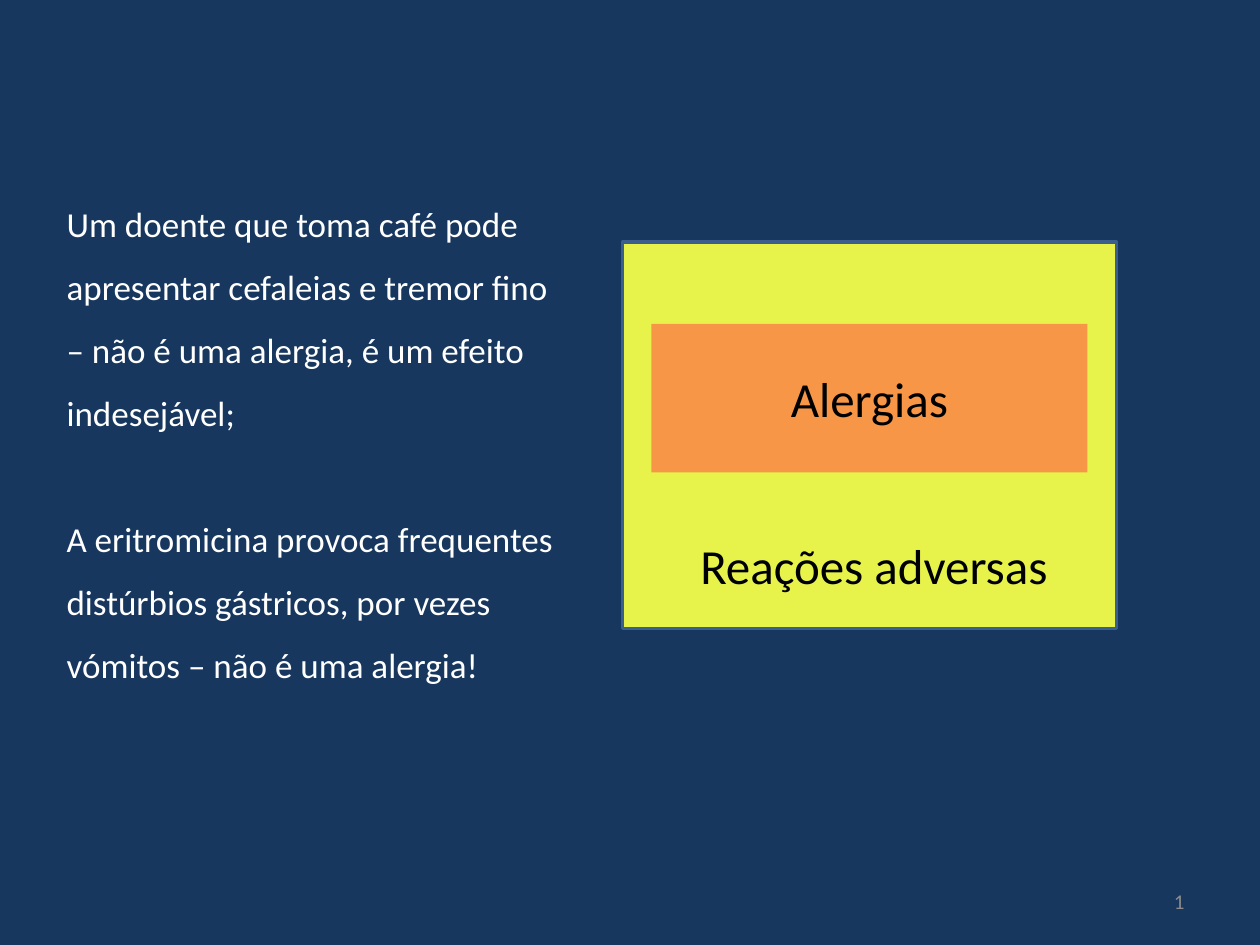
from lxml import etree
from pptx import Presentation
from pptx.dml.color import RGBColor
from pptx.enum.shapes import MSO_SHAPE
from pptx.enum.text import MSO_ANCHOR, PP_ALIGN
from pptx.oxml import parse_xml
from pptx.oxml.ns import nsdecls, qn
from pptx.util import Inches, Pt

NAVY = RGBColor(0x17, 0x37, 0x5E)
YELLOW = RGBColor(0xE7, 0xF3, 0x4B)
ORANGE = RGBColor(0xF7, 0x96, 0x46)
BLUE = RGBColor(0x3A, 0x5F, 0x8C)
GREY = RGBColor(0x8C, 0x8C, 0x8C)
WHITE = RGBColor(0xFF, 0xFF, 0xFF)
BLACK = RGBColor(0, 0, 0)
FONT = "Calibri"

EXAMPLES = [
    "Um doente que toma café pode apresentar cefaleias e tremor fino "
    "– não é uma alergia, é um efeito indesejável;",
    "A eritromicina provoca frequentes distúrbios gástricos, por vezes "
    "vómitos – não é uma alergia!",
]


def add_run(p, text, size, color):
    r = p.add_run()
    r.text = text
    r.font.name = FONT
    r.font.size = Pt(size)
    r.font.color.rgb = color
    return r


def add_box(s, left, top, width, height, fill, label=None):
    sp = s.shapes.add_shape(MSO_SHAPE.RECTANGLE, Inches(left), Inches(top),
                            Inches(width), Inches(height))
    sp.shadow.inherit = False
    sp.fill.solid()
    sp.fill.fore_color.rgb = fill
    sp.line.fill.background()
    if label:
        tf = sp.text_frame
        tf.word_wrap = True
        tf.vertical_anchor = MSO_ANCHOR.MIDDLE
        p = tf.paragraphs[0]
        p.alignment = PP_ALIGN.CENTER
        add_run(p, label, 28, BLACK)
    return sp


def add_examples(s, left, top, width, height):
    tb = s.shapes.add_textbox(Inches(left), Inches(top), Inches(width), Inches(height))
    tf = tb.text_frame
    tf.word_wrap = True
    for i, text in enumerate(EXAMPLES):
        p = tf.add_paragraph() if i else tf.paragraphs[0]
        p.line_spacing = 1.5
        p.space_before = Pt(36 if i else 0)
        add_run(p, text, 20, WHITE)


def add_diagram(s, left, top, width, height):
    # Outer set: all adverse reactions
    outer = add_box(s, left, top, width, height, YELLOW)
    outer.line.color.rgb = BLUE
    outer.line.width = Pt(2)
    # Inner set: allergies, with the name of the outer set below
    add_box(s, left + 0.23, top + 0.65, width - 0.46, 1.18, ORANGE, "Alergias")
    add_box(s, left + 0.15, top + 2.28, width - 0.23, 0.57, YELLOW, "Reações adversas")


def add_slide_number(s, left, top, width, height):
    tb = s.shapes.add_textbox(Inches(left), Inches(top), Inches(width), Inches(height))
    tf = tb.text_frame
    tf.word_wrap = True
    tf.vertical_anchor = MSO_ANCHOR.MIDDLE
    p = tf.paragraphs[0]
    p.alignment = PP_ALIGN.RIGHT
    r = add_run(p, "1", 12, GREY)
    # Turn the run into a slide number field
    fld = parse_xml(f'<a:fld {nsdecls("a")} type="slidenum" '
                    'id="{B6F15528-21DE-4FAA-801E-634DDDAF4B2B}"/>')
    r._r.addprevious(fld)
    for child in list(r._r):
        fld.append(child)
    p._p.remove(r._r)


def main():
    prs = Presentation()
    prs.slide_width, prs.slide_height = Inches(10), Inches(7.5)
    s = prs.slides.add_slide(prs.slide_layouts[6])
    s.background.fill.solid()
    s.background.fill.fore_color.rgb = NAVY
    add_examples(s, 0.43, 1.39, 4.09, 4.14)
    add_diagram(s, 4.94, 1.92, 3.92, 3.07)
    add_slide_number(s, 7.17, 6.95, 2.33, 0.4)
    prs.save("out.pptx")


if __name__ == "__main__":
    main()
